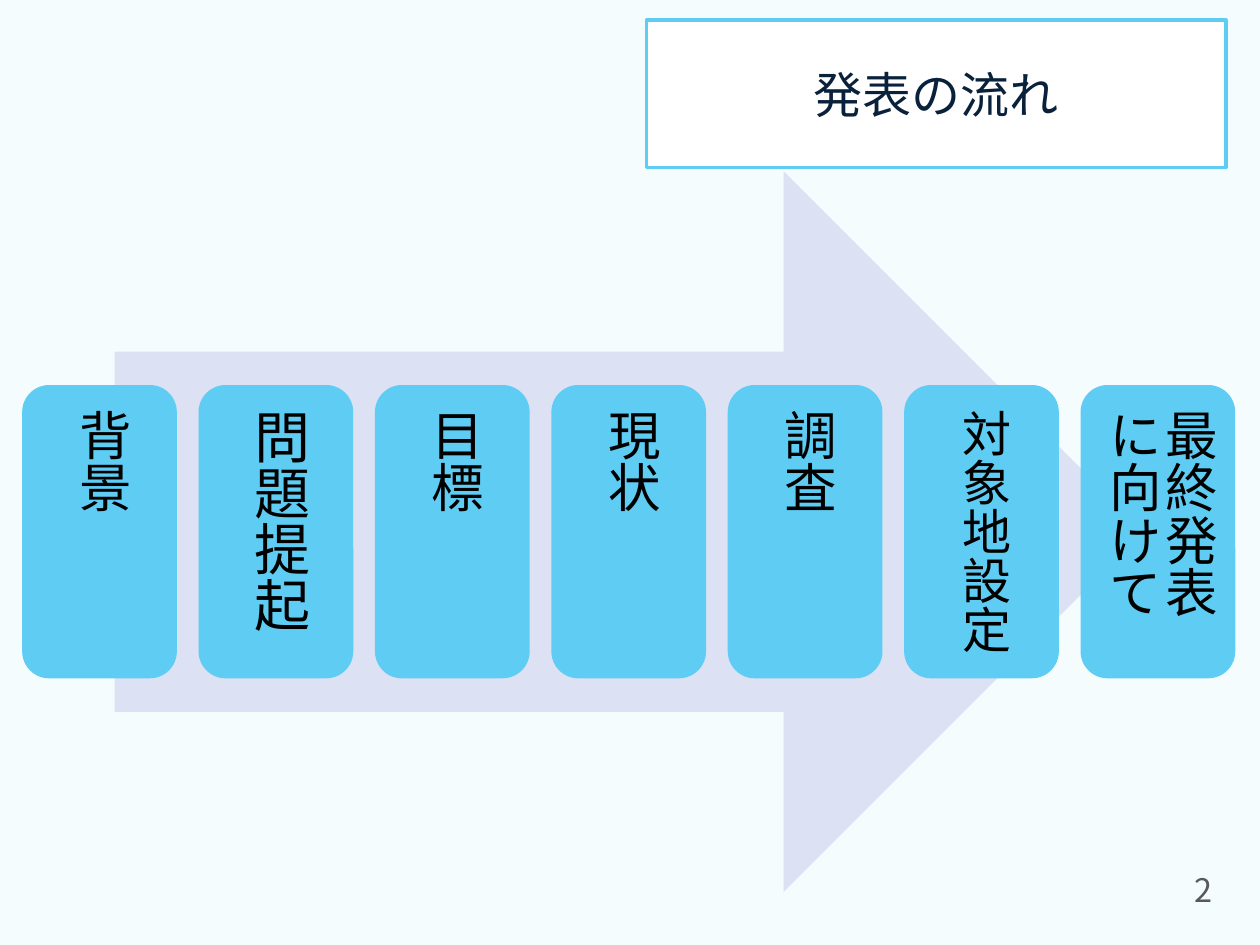
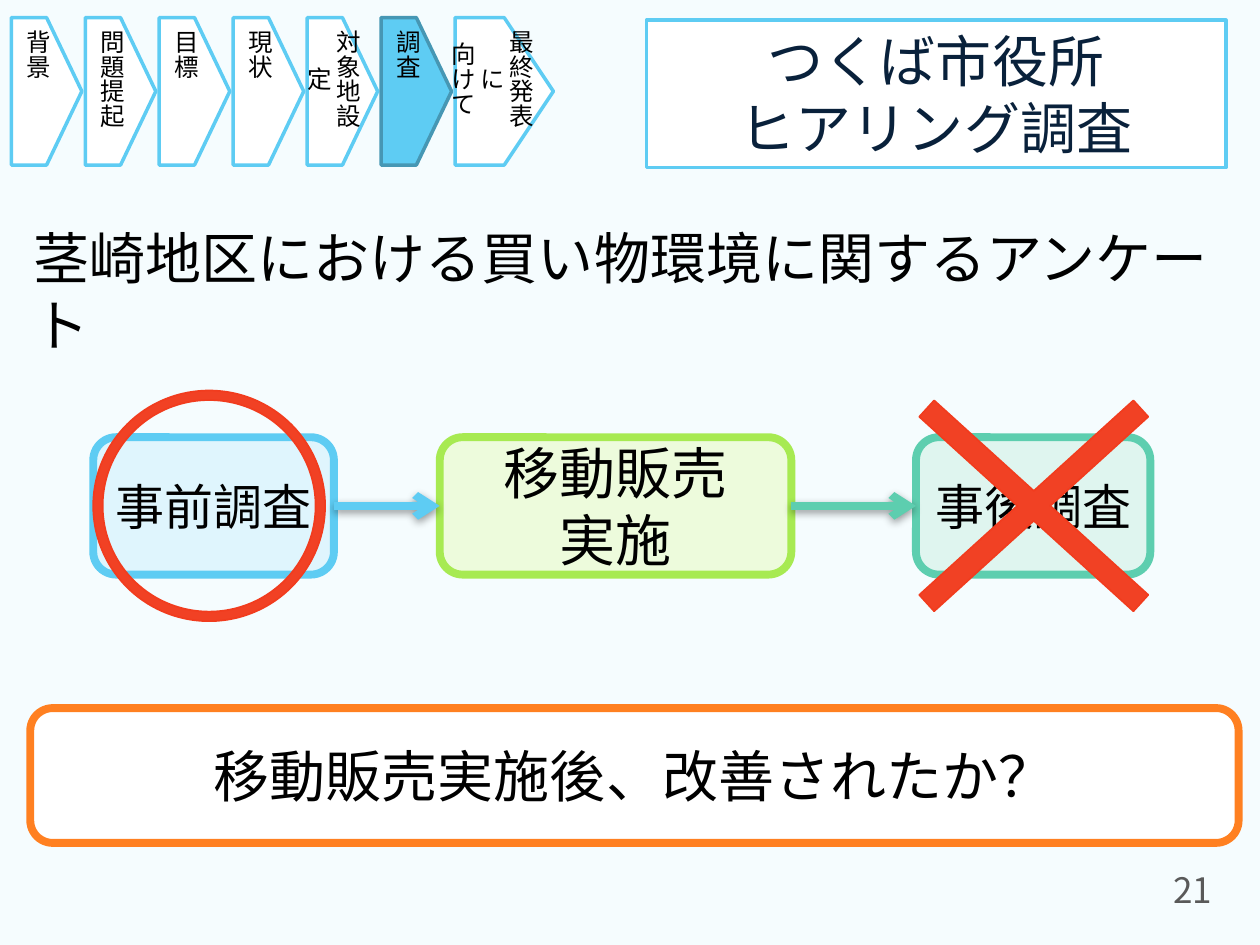
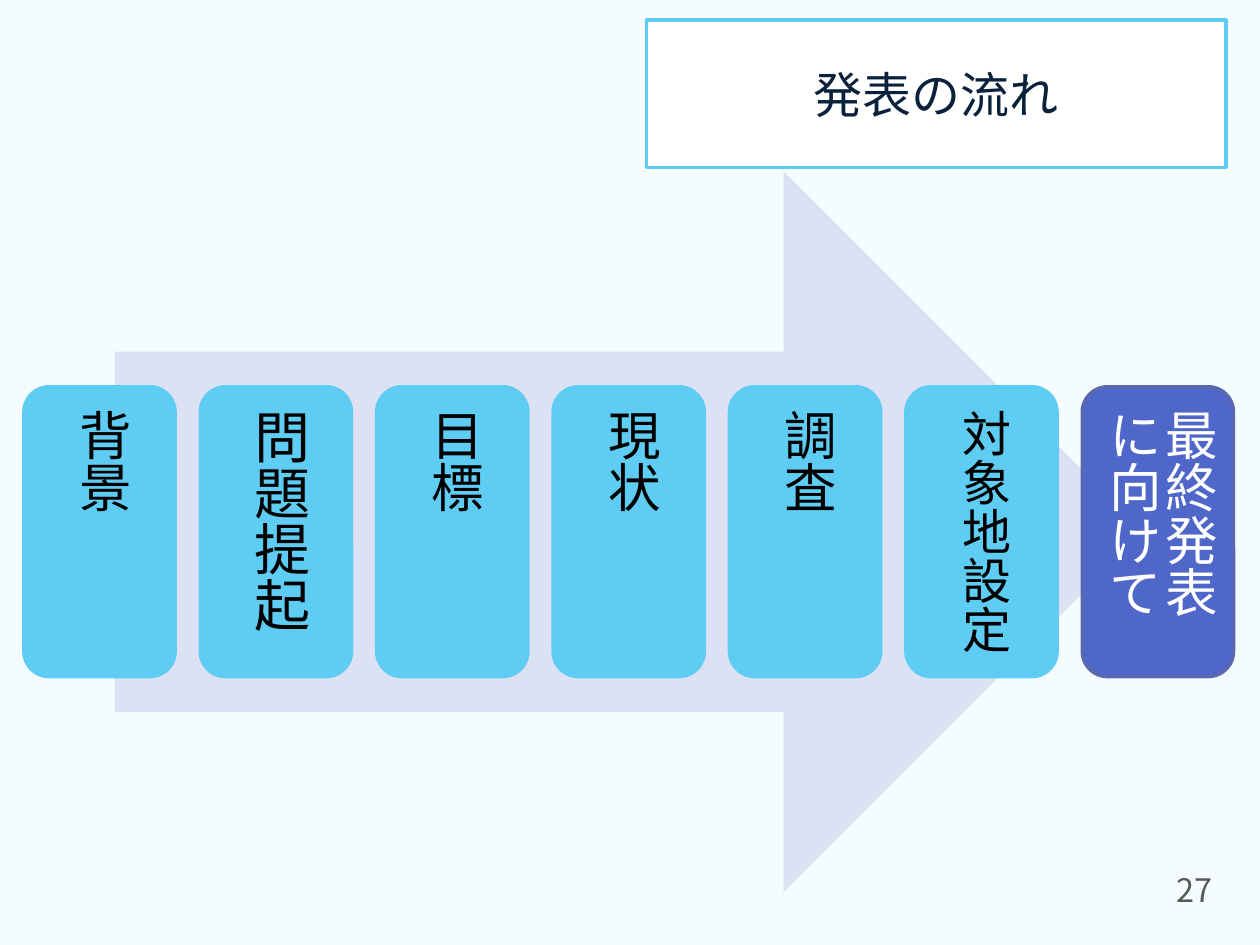
from lxml import etree
from pptx import Presentation
from pptx.dml.color import RGBColor
from pptx.enum.shapes import MSO_CONNECTOR, MSO_SHAPE
from pptx.enum.text import MSO_ANCHOR, PP_ALIGN
from pptx.oxml import parse_xml
from pptx.oxml.ns import nsdecls, qn
from pptx.util import Inches, Pt

COLORS = {
    "background": "F5FCFE", "white": "FFFFFF", "black": "000000",
    "title": "09213B", "number": "595959", "sky": "5ECCF3",
    "sky_dark": "4697B4", "sky_pale": "DFF5FD", "lime": "A7EA52",
    "lime_pale": "EDFBDC", "mint": "5DCEAF", "mint_pale": "DFF5EF",
    "red": "F14124", "red_line": "F13C1E", "orange": "FF8021",
    "flow_arrow": "DCE1F4", "indigo": "4E67C8", "indigo_line": "5968B0",
}
TEXT_FONT, NUMBER_FONT = "Arial", "Noto Sans CJK JP"

# Flow tiles: label, font size
FLOW_STEPS = [("背景", 30), ("問題提起", 32), ("目標", 30), ("現状", 30),
              ("調査", 30), ("対象地設定", 28), ("最終発表に向けて", 30)]
TILE_LEFT, TILE_TOP, TILE_WIDTH, TILE_HEIGHT, TILE_PITCH = 0.19, 3.07, 1.2, 2.3, 1.4

# Progress markers: lines of each label
PROGRESS_STEPS = [["背景"], ["問題提起"], ["目標"], ["現状"], ["対象地設定"],
                  ["調査"], ["最終発表に", "向けて"]]
MARKER_LEFT, MARKER_WIDTH, LAST_MARKER_WIDTH, MARKER_PITCH = 0.09, 0.56, 0.78, 0.587

# Survey stages: lines, left, width, font size, fill, line
SURVEY_STAGES = [
    (["事前調査"], 0.74, 1.91, 28, "sky_pale", "sky"),
    (["移動販売", "実施"], 3.49, 2.79, 32, "lime_pale", "lime"),
    (["事後調査"], 7.27, 1.86, 28, "mint_pale", "mint"),
]
STAGE_ARROW_COLORS = ["sky", "mint"]


def rgb(name):
    return RGBColor.from_string(COLORS[name])


def write(shape, lines, size, color="black", align=PP_ALIGN.CENTER, font=TEXT_FONT,
          vertical=False, spacing=None):
    frame = shape.text_frame
    frame.word_wrap = True
    frame.vertical_anchor = MSO_ANCHOR.MIDDLE
    if vertical:
        shape.element.txBody.find(qn("a:bodyPr")).set("vert", "eaVert")
    for index, line in enumerate(lines):
        paragraph = frame.add_paragraph() if index else frame.paragraphs[0]
        paragraph.text = line
        paragraph.alignment = align
        if spacing:
            paragraph.line_spacing = spacing
        paragraph.font.size = Pt(size)
        paragraph.font.name = font
        paragraph.font.color.rgb = rgb(color)


def paint(shape, fill, line=None, width=2):
    shape.fill.solid()
    shape.fill.fore_color.rgb = rgb(fill)
    if line:
        shape.line.color.rgb = rgb(line)
        shape.line.width = Pt(width)
    else:
        shape.line.fill.background()


def add_painted(slide, kind, box, fill, line=None, width=2, adjustment=None):
    shape = slide.shapes.add_shape(kind, *map(Inches, box))
    shape.shadow.inherit = False
    paint(shape, fill, line, width)
    if adjustment is not None:
        shape.adjustments[0] = adjustment
    return shape


def add_text(slide, box, lines, size, **style):
    write(slide.shapes.add_textbox(*map(Inches, box)), lines, size, **style)


def add_titled_slide(presentation, title_lines, title_size, number, number_size):
    """Add a slide with the rounded title box and its page number."""
    slide = presentation.slides.add_slide(presentation.slide_layouts[5])
    title = slide.shapes.title
    title.left, title.top, title.width, title.height = map(Inches, (5.13, 0.16, 4.6, 1.17))
    title.element.spPr.append(parse_xml(
        f'<a:prstGeom {nsdecls("a")} prst="roundRect"><a:avLst>'
        '<a:gd name="adj" fmla="val 31700"/></a:avLst></a:prstGeom>'))
    paint(title, "white", "sky")
    write(title, title_lines, title_size, color="title")
    add_text(slide, (8.64, 6.86, 1.08, 0.4), [str(number)], number_size,
             color="number", align=PP_ALIGN.RIGHT, font=NUMBER_FONT)
    return slide


def add_flow_slide(presentation, number, current=None):
    slide = add_titled_slide(presentation, ["発表の流れ"], 28, number, 18.5)
    add_painted(slide, MSO_SHAPE.RIGHT_ARROW, (0.91, 1.36, 8.17, 5.72), "flow_arrow")
    for index, (label, size) in enumerate(FLOW_STEPS):
        fill, line, color = (("indigo", "indigo_line", "white") if label == current
                             else ("sky", "sky", "black"))
        left = TILE_LEFT + index * TILE_PITCH
        tile = add_painted(slide, MSO_SHAPE.ROUNDED_RECTANGLE,
                           (left, TILE_TOP, TILE_WIDTH, TILE_HEIGHT), fill, line)
        frame = tile.text_frame
        frame.margin_left = frame.margin_right = Inches(0.12)
        frame.margin_top = frame.margin_bottom = Inches(0.12)
        write(tile, [label], size, color=color, vertical=True, spacing=0.9)


def add_progress(slide, current):
    for index, lines in enumerate(PROGRESS_STEPS):
        fill, line = ("sky", "sky_dark") if lines[0] == current else ("white", "sky")
        width = LAST_MARKER_WIDTH if lines is PROGRESS_STEPS[-1] else MARKER_WIDTH
        marker = add_painted(slide, MSO_SHAPE.PENTAGON,
                             (MARKER_LEFT + index * MARKER_PITCH, 0.14, width, 1.17),
                             fill, line)
        write(marker, lines, 14, vertical=True)


def add_stage_arrow(slide, start, end, color):
    arrow = slide.shapes.add_connector(MSO_CONNECTOR.STRAIGHT, 0, 0, 0, 0)
    arrow.begin_connect(start, 3)
    arrow.end_connect(end, 1)
    arrow.line.color.rgb = rgb(color)
    arrow.line.width = Pt(4.5)
    etree.SubElement(arrow.line._get_or_add_ln(), qn("a:tailEnd"), type="arrow")
    arrow.element.spPr.append(parse_xml(
        f'<a:effectLst {nsdecls("a")}>'
        f'<a:outerShdw blurRad="{Pt(5)}" dist="{Pt(2)}" dir="5400000" rotWithShape="0">'
        f'<a:srgbClr val="{COLORS["black"]}"><a:alpha val="40000"/></a:srgbClr>'
        '</a:outerShdw></a:effectLst>'))


def add_survey_slide(presentation):
    slide = add_titled_slide(presentation, ["つくば市役所", "ヒアリング調査"], 32, 21, 20)
    add_progress(slide, "調査")
    add_text(slide, (0.17, 1.74, 9.83, 1.13),
             ["茎崎地区における買い物環境に関するアンケート"], 32, align=PP_ALIGN.LEFT)
    stages = []
    for lines, left, width, size, fill, line in SURVEY_STAGES:
        stage = add_painted(slide, MSO_SHAPE.ROUNDED_RECTANGLE,
                            (left, 3.47, width, 1.09), fill, line, 4.5)
        write(stage, lines, size)
        stages.append(stage)
    add_painted(slide, MSO_SHAPE.MATH_MULTIPLY, (6.57, 2.53, 3.27, 2.97),
                "red", "red_line", 1, 0.059)
    for start, end, color in zip(stages, stages[1:], STAGE_ARROW_COLORS):
        add_stage_arrow(slide, start, end, color)
    add_painted(slide, MSO_SHAPE.DONUT, (0.74, 3.1, 1.84, 1.83),
                "red", "red_line", 1, 0.041)
    question = add_painted(slide, MSO_SHAPE.ROUNDED_RECTANGLE, (0.24, 5.62, 9.59, 1.07),
                           "white", "orange", 4.5)
    write(question, ["移動販売実施後、改善されたか？"], 32)


def main():
    presentation = Presentation()
    presentation.slide_width, presentation.slide_height = Inches(10), Inches(7.5)
    background = presentation.slide_master.background.fill
    background.solid()
    background.fore_color.rgb = rgb("background")
    add_flow_slide(presentation, 2)
    add_survey_slide(presentation)
    add_flow_slide(presentation, 27, current="最終発表に向けて")
    presentation.save("out.pptx")


if __name__ == "__main__":
    main()
